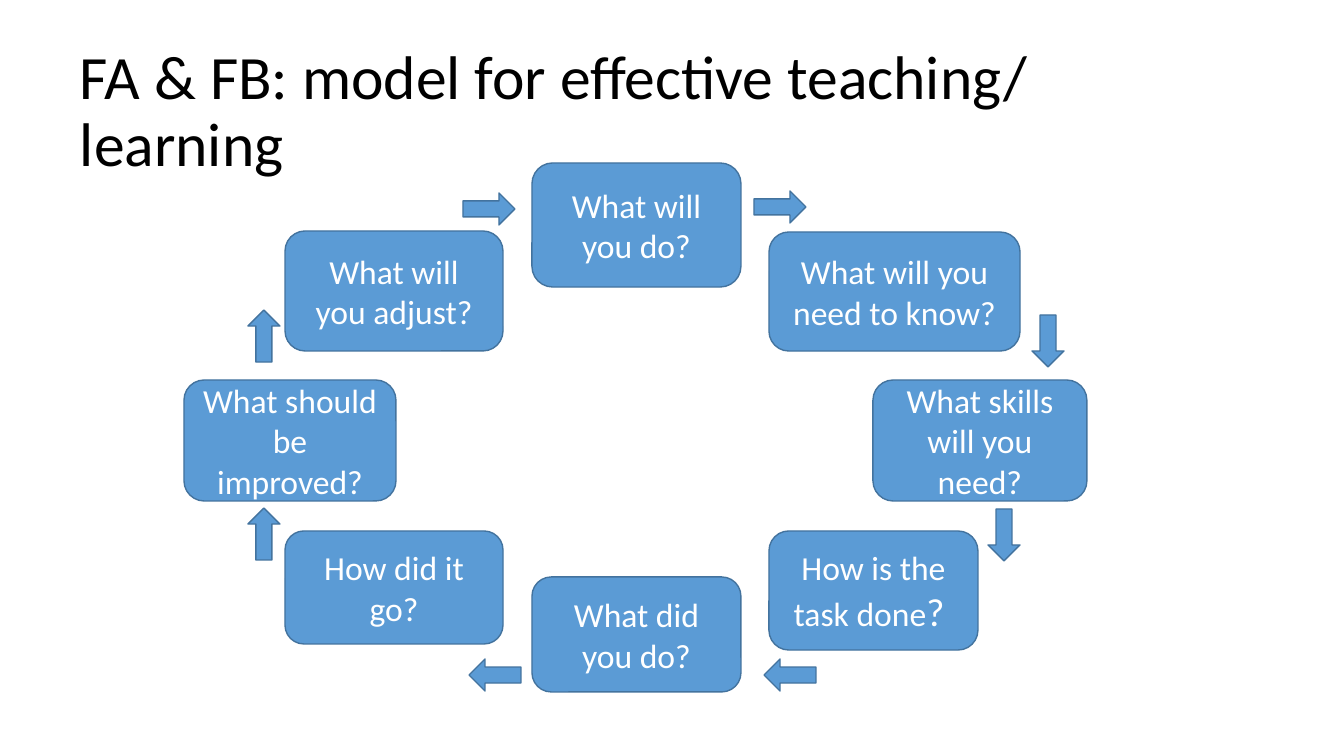
import pptx
import pptx.util
import pptx.dml.color
import pptx.enum.shapes
import pptx.enum.text

EMU_PER_PX = 914400 / 100.8
SLIDE_SIZE = (1344, 756)
FONT = "Calibri"
BLUE, OUTLINE, WHITE, BLACK = "5B9BD5", "43739E", "FFFFFF", "000000"

TITLE = "FA & FB: model for effective teaching/ learning"
TITLE_PLACE = (70, 40, 1182, 146)

STEPS = [
    ((532, 163, 209, 124), [("What will you do?", 24)]),
    ((769, 232, 251, 119), [("What will you need to know?", 24)]),
    ((873, 380, 214, 121), [("What skills will you need?", 24)]),
    ((769, 531, 209, 119), [("How is the task done", 24), ("? ", 28)]),
    ((532, 577, 209, 115), [("What did you do?", 24)]),
    ((285, 531, 218, 113), [("How did it go?", 24)]),
    ((184, 380, 212, 121), [("What should be improved?", 24)]),
    ((285, 231, 218, 120), [("What will you adjust?", 24)]),
]

ARROW_SIZE = (52, 32)
ARROWS = [
    (754, 191, 0),
    (1022, 325, 90),
    (978, 519, 90),
    (764, 659, 180),
    (469, 659, 180),
    (238, 518, 270),
    (238, 320, 270),
    (463, 193, 0),
]


def px(lengths):
    return [pptx.util.Emu(round(length * EMU_PER_PX)) for length in lengths]


def color(value):
    return pptx.dml.color.RGBColor.from_string(value)


def write(shape, spans, ink):
    frame = shape.text_frame
    frame.word_wrap = True
    frame.vertical_anchor = pptx.enum.text.MSO_ANCHOR.MIDDLE
    para = frame.paragraphs[0]
    for text, size in spans:
        span = para.add_run()
        span.text = text
        span.font.name = FONT
        span.font.size = pptx.util.Pt(size)
        span.font.color.rgb = color(ink)
    return para


def add_blue_shape(page, kind, place):
    shape = page.shapes.add_shape(kind, *px(place))
    shape.shadow.inherit = False
    shape.fill.solid()
    shape.fill.fore_color.rgb = color(BLUE)
    shape.line.color.rgb = color(OUTLINE)
    shape.line.width = pptx.util.Pt(1)
    return shape


def main():
    deck = pptx.Presentation()
    deck.slide_width, deck.slide_height = px(SLIDE_SIZE)
    page = deck.slides.add_slide(deck.slide_layouts[6])
    kinds = pptx.enum.shapes.MSO_SHAPE

    title = page.shapes.add_textbox(*px(TITLE_PLACE))
    write(title, [(TITLE, 44)], BLACK).line_spacing = 0.9

    for place, spans in STEPS:
        box = add_blue_shape(page, kinds.ROUNDED_RECTANGLE, place)
        write(box, spans, WHITE).alignment = pptx.enum.text.PP_ALIGN.CENTER

    for left, top, turn in ARROWS:
        arrow = add_blue_shape(page, kinds.RIGHT_ARROW, (left, top, *ARROW_SIZE))
        arrow.rotation = turn

    deck.save("out.pptx")


if __name__ == "__main__":
    main()
